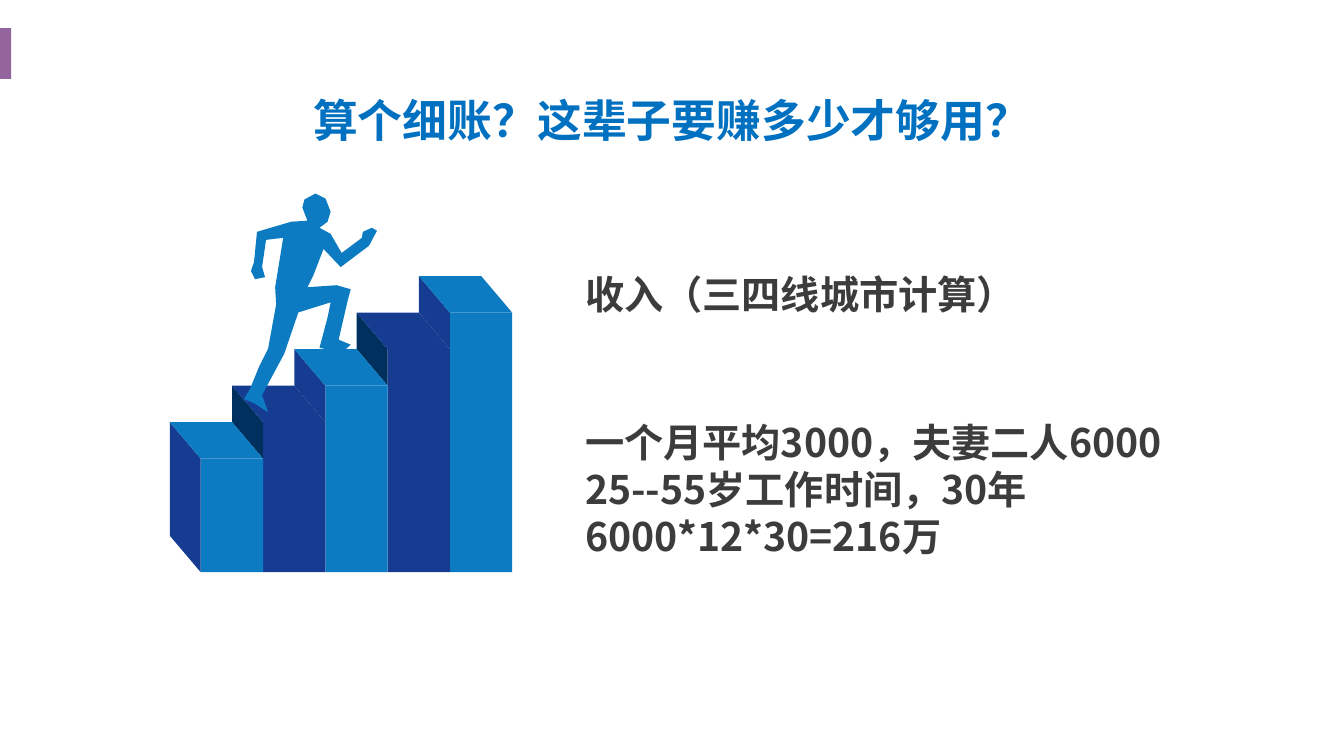
from pptx import Presentation
from pptx.dml.color import RGBColor
from pptx.enum.shapes import MSO_SHAPE
from pptx.enum.text import MSO_ANCHOR, PP_ALIGN
from pptx.oxml.ns import qn
from pptx.util import Cm, Pt

# Content
TITLE = "算个细账？这辈子要赚多少才够用？"
INCOME_HEADING = ["收入（三四线城市计算）"]
INCOME_LINES = [
    "一个月平均3000，夫妻二人6000",
    "25--55岁工作时间，30年",
    "6000*12*30=216万",
]
FONT = "Noto Sans CJK SC"
COLORS = {
    "title": "0070C0",
    "text": "3C3C3C",
    "accent": "94659C",
    "blue": "0D7BC2",
    "navy": "163C92",
    "shade": "00305D",
}

# Staircase from left to right: front and top colour, side colour
STEPS = [("blue", "navy"), ("navy", "shade")] * 2 + [("blue", "navy")]
STEP_LEFT, STEP_TOP, STEP_BOTTOM = 5.06, 11.56, 14.42
STEP_WIDTH, STEP_RISE, STEP_DEPTH = 1.57, 0.92, 0.78

# Runner outline in hundredths of an inch
RUNNER = [
    # Raised hand and shoulder
    (369, 226), (360, 230), (359, 236), (339, 251), (328, 232), (317, 226),
    # Head
    (325, 220), (328, 210), (323, 197), (313, 192), (302, 198), (300, 206), (305, 219),
    # Back arm
    (289, 220), (255, 230), (252, 260), (249, 269), (253, 277), (263, 275),
    (260, 265), (264, 238), (281, 236),
    # Back and trailing leg
    (273, 285), (274, 302), (266, 346), (257, 364), (248, 386), (242, 396),
    (252, 400), (266, 409), (260, 392), (282, 351), (296, 310),
    # Front leg
    (328, 300), (325, 315), (317, 345), (339, 350), (348, 342), (336, 337),
    (345, 298), (348, 287), (334, 283), (305, 285),
    # Chest and raised arm
    (311, 273), (321, 247), (338, 265), (366, 244), (374, 229),
]
HUNDREDTH_CM = Cm(0.01)
HUNDREDTH_INCH = Cm(0.0254)

prs = Presentation()
prs.slide_width, prs.slide_height = Cm(33.87), Cm(19.05)
slide = prs.slides.add_slide(prs.slide_layouts[5])


def paint(part, color):
    part.shadow.inherit = False
    part.fill.solid()
    part.fill.fore_color.rgb = RGBColor.from_string(COLORS[color])
    part.line.fill.background()


def add_block(left, top, width, height, color):
    block = slide.shapes.add_shape(
        MSO_SHAPE.RECTANGLE, Cm(left), Cm(top), Cm(width), Cm(height))
    paint(block, color)


def add_outline(points, unit, color):
    builder = slide.shapes.build_freeform(*points[0], scale=unit)
    builder.add_line_segments(points[1:], close=True)
    paint(builder.convert_to_shape(), color)


def add_face(corners, color):
    add_outline([(round(x * 100), round(y * 100)) for x, y in corners],
                HUNDREDTH_CM, color)


def format_run(paragraph, size, color):
    for run in paragraph.runs:
        run.font.size = Pt(size)
        run.font.bold = True
        run.font.name = FONT
        run.font.color.rgb = RGBColor.from_string(COLORS[color])
        east_asian = run._r.get_or_add_rPr().makeelement(qn("a:ea"), {"typeface": FONT})
        run.font._element.find(qn("a:latin")).addnext(east_asian)


def add_text(lines, top, height):
    frame = slide.shapes.add_textbox(Cm(14.5), Cm(top), Cm(16.28), Cm(height)).text_frame
    frame.word_wrap = True
    frame.text = "\n".join(lines)
    for paragraph in frame.paragraphs:
        paragraph.line_spacing = Pt(33.6)
        format_run(paragraph, 28, "text")


# Title
title = slide.shapes.title
title.left, title.top, title.width, title.height = Cm(1.63), Cm(1.98), Cm(30.61), Cm(2.06)
title.text_frame.text = TITLE
title.text_frame.vertical_anchor = MSO_ANCHOR.MIDDLE
title.text_frame.paragraphs[0].alignment = PP_ALIGN.CENTER
format_run(title.text_frame.paragraphs[0], 32, "title")

# Accent bar at the slide edge
add_block(0, 0.71, 0.28, 1.28, "accent")

# Staircase, drawn from the highest step down
for index, (face, side) in reversed(list(enumerate(STEPS))):
    left = STEP_LEFT + index * STEP_WIDTH
    top = STEP_TOP - index * STEP_RISE
    height = STEP_BOTTOM - top
    back_left, back_top = left - STEP_DEPTH, top - STEP_RISE
    side_height = STEP_RISE if index else height
    add_block(left, top, STEP_WIDTH, height, face)
    add_face([(left, top), (back_left, back_top),
              (back_left, back_top + side_height), (left, top + side_height)], side)
    add_face([(back_left + STEP_WIDTH, back_top), (back_left, back_top),
              (left, top), (left + STEP_WIDTH, top)], face)

# Runner
add_outline(RUNNER, HUNDREDTH_INCH, "blue")

# Income text
add_text(INCOME_HEADING, 6.68, 1.45)
add_text(INCOME_LINES, 10.41, 3.84)

prs.save("out.pptx")
